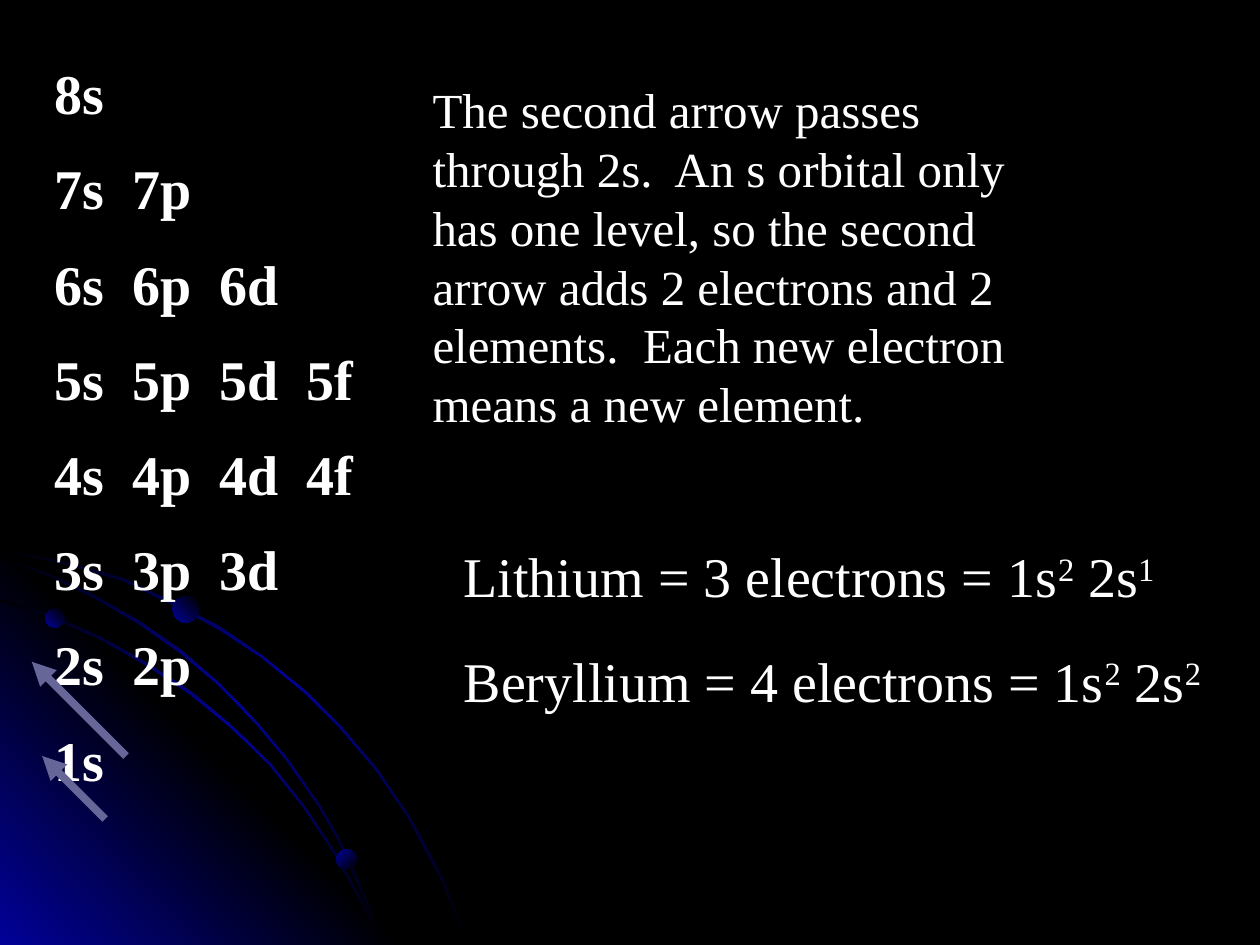
from lxml import etree
from pptx import Presentation
from pptx.dml.color import RGBColor
from pptx.enum import shapes, text
from pptx.oxml import ns
from pptx.util import Cm, Pt

BLACK = RGBColor(0x00, 0x00, 0x00)
WHITE = RGBColor(0xFF, 0xFF, 0xFF)
BLUE = RGBColor(0x01, 0x01, 0x99)
LAVENDER = RGBColor(0x66, 0x66, 0x99)
FONT = "Times New Roman"
UNIT = Cm(2.54) / 100  # grid of the corner artwork

# Outer edge of each orbit, in grid units from the corner of the artwork
OUTER_ORBIT = [(0, 8), (28, 14), (57, 20), (98, 32), (136, 50), (174, 70),
               (209, 94), (242, 121), (272, 151), (300, 184), (325, 221),
               (339, 246), (352, 271), (362, 296), (372, 322)]
INNER_ORBIT = [(0, 48), (41, 61), (79, 78), (117, 99), (152, 122), (184, 149),
               (215, 179), (242, 213), (266, 249), (286, 285), (296, 303),
               (303, 322)]
MIDDLE_ORBIT = [(0, 15), (39, 28), (76, 46), (111, 66), (144, 89), (175, 116),
                (204, 146), (229, 176), (254, 212), (269, 238), (282, 266),
                (294, 293), (303, 322)]
GLOW = [(0, 0), (322, 323), (0, 323)]
ELECTRONS = [(36, 56, 15, 315), (267, 247, 16, 45), (137, 46, 21, 315)]

ORBITALS = ["8s", "7s  7p", "6s  6p  6d", "5s  5p  5d  5f", "4s  4p  4d  4f",
            "3s  3p  3d", "2s  2p", "1s"]
EXPLANATION = ("The second arrow passes through 2s.  An s orbital only has one "
               "level, so the second arrow adds 2 electrons and 2 elements.  "
               "Each new electron means a new element.")


def add_child(parent, tag, **attributes):
    return etree.SubElement(parent, ns.qn(tag), attributes)


def paint_gradient(shape, colors, angle):
    """Fill with evenly spaced colours, without outline or shadow."""
    shape.shadow.inherit = False
    shape.line.fill.background()
    shape.fill.gradient()
    gradient = shape.fill._xPr.find(ns.qn("a:gradFill"))
    for child in list(gradient):
        gradient.remove(child)
    stops = add_child(gradient, "a:gsLst")
    for index, color in enumerate(colors):
        position = 100000 * index // (len(colors) - 1)
        stop = add_child(stops, "a:gs", pos=str(position))
        add_child(stop, "a:srgbClr", val=str(color))
    add_child(gradient, "a:lin", ang=str(angle * 60000), scaled="0")


def add_outline(page, left, top, points, colors, angle):
    builder = page.shapes.build_freeform(*points[0], scale=UNIT)
    builder.add_line_segments(points[1:], close=True)
    shape = builder.convert_to_shape(left, top)
    paint_gradient(shape, colors, angle)


def add_orbit(page, left, top, edge):
    """Draw a thin band whose thickness turns from vertical to horizontal."""
    last = len(edge) - 1
    inner = [(max(0, round(x - 2 * i / last)), round(y + 2.4 * (1 - i / last)))
             for i, (x, y) in enumerate(edge)]
    add_outline(page, left, top, edge + inner[::-1], [BLACK, BLUE, BLACK], 45)


def add_corner_art(page, left, top):
    add_orbit(page, left, top, OUTER_ORBIT)
    add_outline(page, left, top, GLOW, [BLUE, BLACK, BLUE], 315)
    for edge in (INNER_ORBIT, MIDDLE_ORBIT):
        add_orbit(page, left, top, edge)
    for x, y, size, angle in ELECTRONS:
        electron = page.shapes.add_shape(
            shapes.MSO_SHAPE.OVAL, round(left + x * UNIT), round(top + y * UNIT),
            round(size * UNIT), round(size * UNIT))
        paint_gradient(electron, [BLUE, BLACK], angle)


def add_text(page, left, top, width, height, paras, size=32, bold=False):
    """Each paragraph is a list of (text, raised) spans."""
    box = page.shapes.add_textbox(left, top, width, height)
    frame = box.text_frame
    frame.word_wrap = True
    frame.auto_size = text.MSO_AUTO_SIZE.SHAPE_TO_FIT_TEXT
    for index, spans in enumerate(paras):
        para = frame.add_paragraph() if index else frame.paragraphs[0]
        before = add_child(para._p.get_or_add_pPr(), "a:spcBef")
        add_child(before, "a:spcPct", val="50000")
        for words, raised in spans:
            span = para.add_run()
            span.text = words
            span.font.name = FONT
            span.font.size = Pt(size)
            span.font.bold = bold
            span.font.color.rgb = WHITE
            if raised:
                span._r.get_or_add_rPr().set("baseline", "30000")


def add_arrow(page, start, end):
    arrow = page.shapes.add_connector(
        shapes.MSO_CONNECTOR.STRAIGHT, *start, *end)
    arrow.line.color.rgb = LAVENDER
    arrow.line.width = Pt(4.5)
    add_child(arrow.line._get_or_add_ln(), "a:tailEnd", type="triangle")
    add_child(arrow._element.spPr, "a:effectLst")


def add_orbital_chart(page, left, top, width, height):
    add_text(page, left, top, width, height,
             [[(row, False)] for row in ORBITALS], bold=True)


def add_filling_arrows(page, left, top):
    """Diagonal arrows through 1s and 2s, from the upper arrow's tip."""
    for x, y, reach in ((0.21, 1.9, 1.27), (0, 0, 1.9)):
        tip = left + Cm(x), top + Cm(y)
        add_arrow(page, (tip[0] + Cm(reach), tip[1] + Cm(reach)), tip)


def add_configuration(page, left, top, width, element, electrons, last):
    spans = [(f"{element} = {electrons} electrons = 1s", False), ("2", True),
             (" 2s", False), (last, True)]
    add_text(page, left, top, width, Cm(1.6), [spans])


def main():
    deck = Presentation()
    deck.slide_width, deck.slide_height = Cm(25.4), Cm(19.05)
    page = deck.slides.add_slide(deck.slide_layouts[6])
    page.background.fill.solid()
    page.background.fill.fore_color.rgb = BLACK

    add_corner_art(page, Cm(0), Cm(10.85))
    add_orbital_chart(page, Cm(0.85), Cm(1.06), Cm(6.77), Cm(17.37))
    add_configuration(page, Cm(9.1), Cm(10.8), Cm(15.66), "Lithium", 3, "1")
    add_filling_arrows(page, Cm(0.64), Cm(13.34))
    add_text(page, Cm(8.47), Cm(1.48), Cm(13.55), Cm(8.38),
             [[(EXPLANATION, False)]], size=28)
    add_configuration(page, Cm(9.1), Cm(12.91), Cm(16.09), "Beryllium", 4, "2")
    deck.save("out.pptx")


if __name__ == "__main__":
    main()
